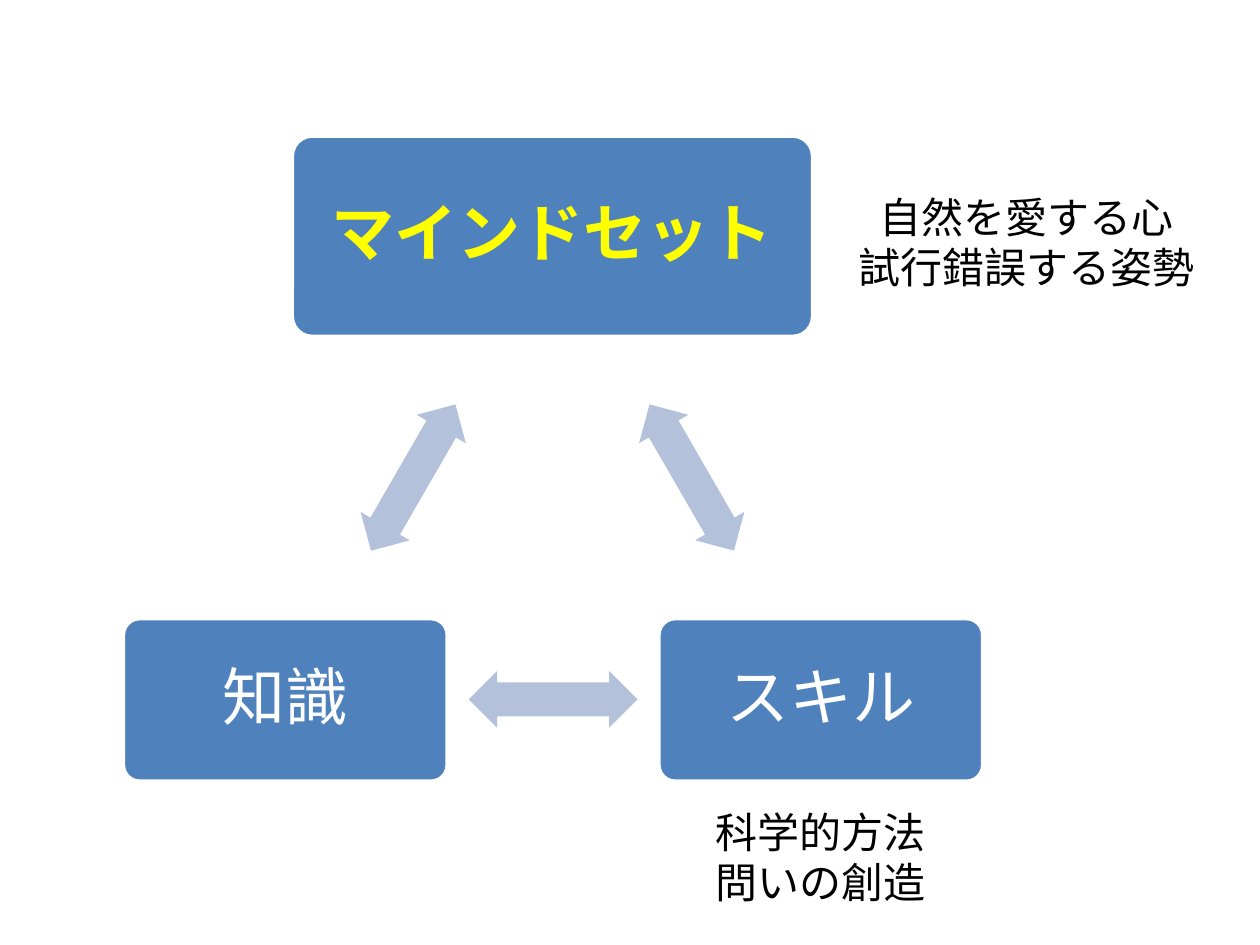
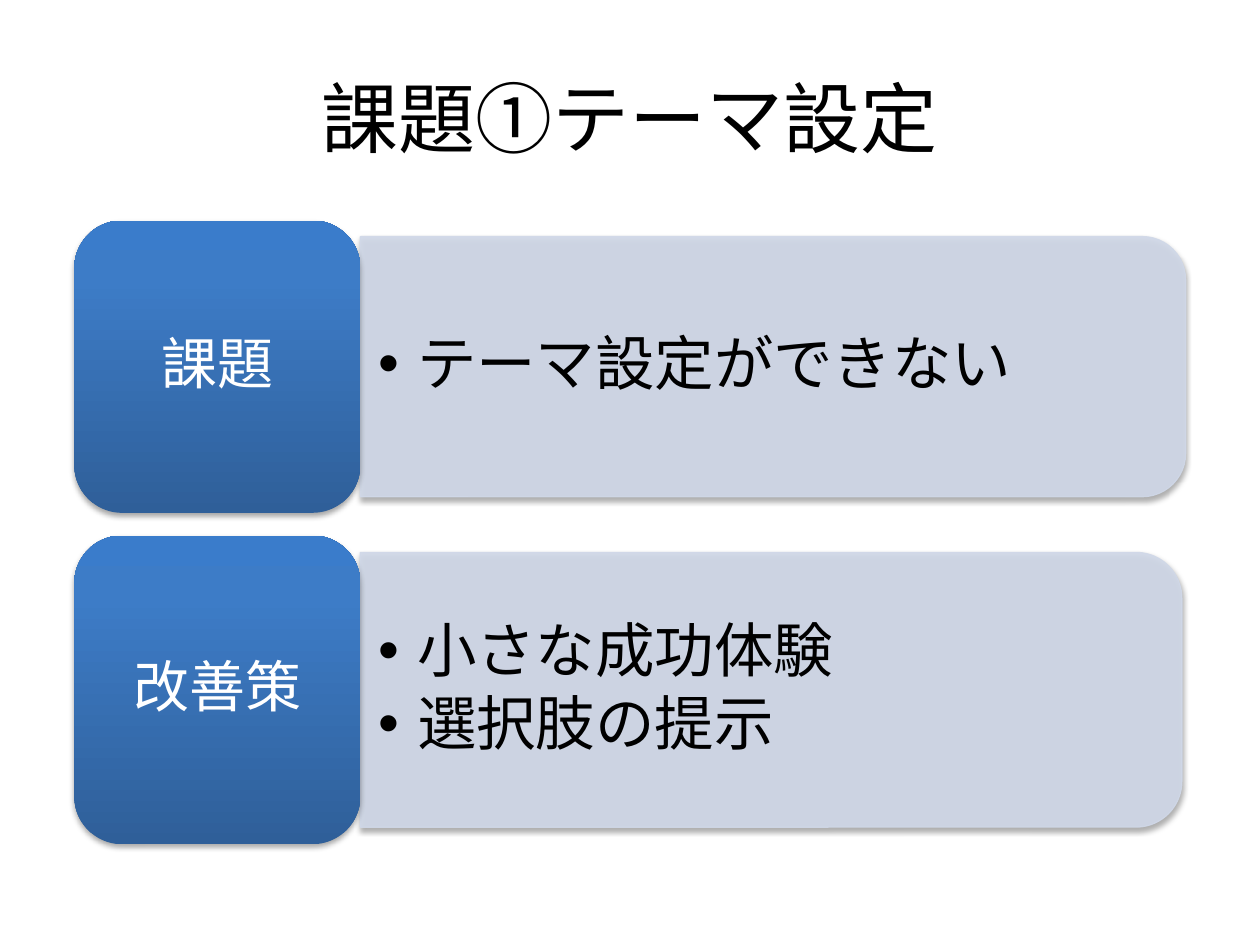
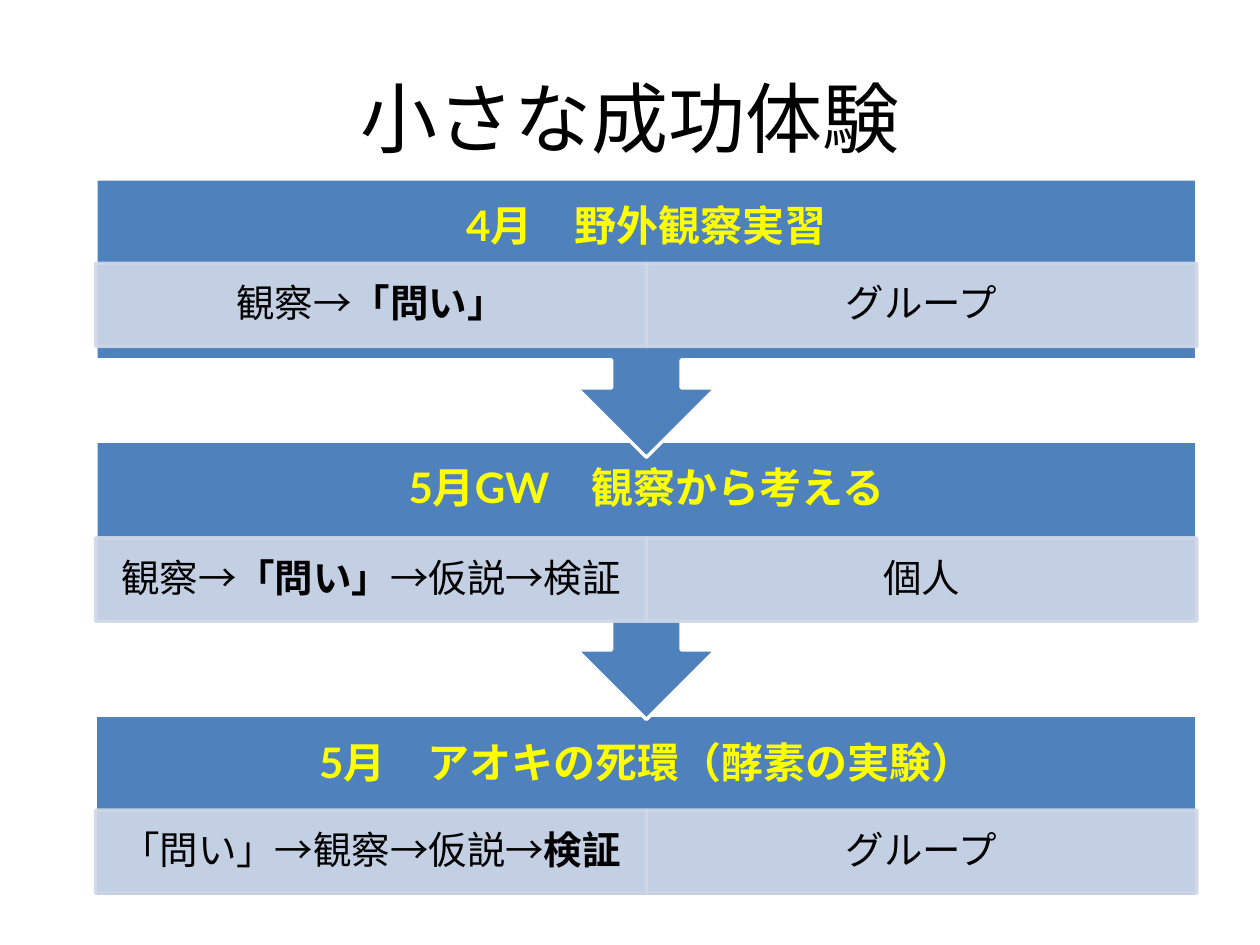
"""Build three slides on teaching inquiry: mindset, theme setting and small successes."""
import copy

import lxml.etree
import pptx
import pptx.dml.color
import pptx.enum.shapes
import pptx.enum.text
import pptx.oxml
import pptx.oxml.ns
import pptx.util

Inches = pptx.util.Inches
Pt = pptx.util.Pt
RGBColor = pptx.dml.color.RGBColor
SHAPE = pptx.enum.shapes.MSO_SHAPE
ALIGN = pptx.enum.text.PP_ALIGN
ANCHOR = pptx.enum.text.MSO_ANCHOR
qn = pptx.oxml.ns.qn

BLUE = RGBColor(0x4F, 0x81, 0xBD)
ARROW = RGBColor(0xB3, 0xC1, 0xDB)
PALE = RGBColor(0xD0, 0xD8, 0xE8)
WHITE = RGBColor(0xFF, 0xFF, 0xFF)
BLACK = RGBColor(0x00, 0x00, 0x00)
YELLOW = RGBColor(0xFF, 0xFF, 0x00)
GRADIENT = [
    (0, RGBColor(0x2F, 0x5F, 0x99)),
    (0.8, RGBColor(0x3D, 0x7C, 0xC7)),
    (1, RGBColor(0x3A, 0x7C, 0xCB)),
]
FONT = "Lato"
TITLE_ONLY, TWO_CONTENT, BLANK = 5, 3, 6


class Deck:
    def __init__(self):
        self.prs = pptx.Presentation()
        self.prs.slide_width = Inches(10)
        self.prs.slide_height = Inches(7.5)
        self.s = None

    def slide(self, layout, title=None):
        self.s = self.prs.slides.add_slide(self.prs.slide_layouts[layout])
        if title:
            self.set_text(self.s.shapes.title, [title], 44)

    def set_text(self, sp, lines, size, color=BLACK, bold=None, margins=(0.1, 0.05),
                 spacing=None, anchor=ANCHOR.MIDDLE, align=ALIGN.CENTER):
        """Fill a shape with lines; parts between asterisks are bold."""
        tf = sp.text_frame
        tf.word_wrap = True
        tf.auto_size = pptx.enum.text.MSO_AUTO_SIZE.NONE
        tf.vertical_anchor = anchor
        tf.margin_left = tf.margin_right = Inches(margins[0])
        tf.margin_top = tf.margin_bottom = Inches(margins[1])
        for i, line in enumerate(lines):
            p = tf.add_paragraph() if i else tf.paragraphs[0]
            p.alignment = align
            p.line_spacing = spacing
            p.font.name = FONT
            p.font.size = Pt(size)
            p.font.color.rgb = color
            p.font.bold = bold
            for j, part in enumerate(line.split("*")):
                r = p.add_run()
                r.text = part
                if j % 2:
                    r.font.bold = True

    def text(self, box, lines, size, **style):
        sp = self.s.shapes.add_textbox(*map(Inches, box))
        self.set_text(sp, lines, size, **style)

    def shape(self, kind, box, fill=None, line=None, width=2, rotation=0,
              adjust=(), opacity=None):
        sp = self.s.shapes.add_shape(kind, *map(Inches, box))
        sp.shadow.inherit = False
        sp.rotation = rotation
        for i, value in enumerate(adjust):
            sp.adjustments[i] = value
        if fill is not None:
            sp.fill.solid()
            sp.fill.fore_color.rgb = fill
        if line is None:
            sp.line.fill.background()
        else:
            sp.line.color.rgb = line
            sp.line.width = Pt(width)
        if opacity:
            for clr in sp._element.spPr.iter(qn("a:srgbClr")):
                lxml.etree.SubElement(clr, qn("a:alpha"), val=str(opacity * 1000))
        return sp

    def cast_shadow(self, sp):
        effects = sp._element.spPr.find(qn("a:effectLst"))
        effects.append(pptx.oxml.parse_xml(
            f'<a:outerShdw {pptx.oxml.ns.nsdecls("a")} blurRad="40000" dist="23000"'
            ' dir="5400000" rotWithShape="0"><a:srgbClr val="000000">'
            '<a:alpha val="35000"/></a:srgbClr></a:outerShdw>'))

    def shade(self, sp):
        sp.fill.gradient()
        sp.fill.gradient_angle = 90
        stops = sp._element.spPr.find(".//" + qn("a:gsLst"))
        stops.append(copy.deepcopy(stops[-1]))
        for stop, (position, color) in zip(sp.fill.gradient_stops, GRADIENT):
            stop.position = position
            stop.color.rgb = color

    def node(self, box, label, color=WHITE, bold=None):
        sp = self.shape(SHAPE.ROUNDED_RECTANGLE, box, BLUE, WHITE, adjust=[0.1])
        self.set_text(sp, [label], 36, color, bold, (0.15, 0.15), 0.9)

    def double_arrow(self, cx, cy, rotation):
        w, h = 1.34, 0.45
        self.shape(SHAPE.LEFT_RIGHT_ARROW, (cx - w / 2, cy - h / 2, w, h), ARROW,
                   rotation=rotation, adjust=[0.6, 0.5])

    def bullets(self, ph, box, lines):
        ph.left, ph.top, ph.width, ph.height = map(Inches, box)
        self.set_text(ph, lines, 34, margins=(0.14, 0.07), spacing=0.9, align=ALIGN.LEFT)
        for p in ph.text_frame.paragraphs:
            p.space_before = Pt(0)
            p.space_after = Pt(5)
            pPr = p._p.get_or_add_pPr()
            pPr.set("marL", str(Inches(0.31)))
            pPr.set("indent", str(Inches(-0.31)))
        self.s.shapes._spTree.append(ph._element)

    def topic(self, ph, top, height, width, label, lines):
        left, label_width = 0.59, 2.27
        x, h = left + label_width, 0.89 * height
        middle = top + height / 2
        bar = self.shape(SHAPE.ROUND_2_SAME_RECTANGLE,
                         (x + (width - h) / 2, middle - width / 2, h, width),
                         PALE, PALE, 0.75, rotation=90, opacity=90)
        self.cast_shadow(bar)
        self.bullets(ph, (x, middle - h / 2, width - 0.1, h), lines)
        sp = self.shape(SHAPE.ROUNDED_RECTANGLE, (left, top, label_width, height))
        self.shade(sp)
        self.cast_shadow(sp)
        self.set_text(sp, [label], 32, WHITE, margins=(0.13, 0.07), spacing=0.9)

    def step(self, kind, top, height, rotation, heading, cell_top, cells):
        left, width = 0.76, 8.74
        self.shape(kind, (left, top, width, height), BLUE, WHITE, rotation=rotation)
        self.text((left, top, width, 0.78), [heading], 24, color=YELLOW, bold=True,
                  margins=(0.19, 0.19), spacing=0.9)
        w = width / len(cells)
        for i, cell in enumerate(cells):
            sp = self.shape(SHAPE.RECTANGLE, (left + i * w, cell_top, w, 0.66),
                            PALE, PALE, opacity=90)
            self.set_text(sp, [cell], 22, margins=(0.17, 0.03), spacing=0.9)


def main():
    deck = Deck()

    deck.slide(BLANK)
    deck.node((2.32, 1.08, 4.13, 1.59), "マインドセット", YELLOW, True)
    deck.node((5.23, 4.91, 2.57, 1.29), "スキル")
    deck.node((0.98, 4.91, 2.57, 1.29), "知識")
    for cx, cy, rotation in [(5.49, 3.79, 60), (4.39, 5.55, 180), (3.28, 3.79, 300)]:
        deck.double_arrow(cx, cy, rotation)
    deck.text((6.65, 1.47, 2.99, 0.91), ["自然を愛する心", "試行錯誤する姿勢"], 24,
              anchor=ANCHOR.TOP)
    deck.text((5.31, 6.35, 2.4, 0.91), ["科学的方法", "問いの創造"], 24,
              anchor=ANCHOR.TOP)

    deck.slide(TWO_CONTENT, "課題①テーマ設定")
    problem, remedy = list(deck.s.placeholders)[1:3]
    deck.topic(problem, 1.75, 2.32, 6.55, "課題", ["テーマ設定ができない"])
    deck.topic(remedy, 4.25, 2.45, 6.52, "改善策", ["小さな成功体験", "選択肢の提示"])

    deck.slide(TITLE_ONLY, "小さな成功体験")
    deck.step(SHAPE.RECTANGLE, 5.68, 1.44, 0, "5月　アオキの死環（酵素の実験）",
              6.43, ["「問い」→観察→仮説→*検証", "グループ"])
    deck.step(SHAPE.UP_ARROW_CALLOUT, 3.5, 2.21, 180, "5月GW　観察から考える",
              4.27, ["観察→*「問い」*→仮説→検証", "個人"])
    deck.step(SHAPE.UP_ARROW_CALLOUT, 1.42, 2.21, 180, "4月　野外観察実習",
              2.09, ["観察→*「問い」", "グループ"])

    deck.prs.save("out.pptx")


if __name__ == "__main__":
    main()
